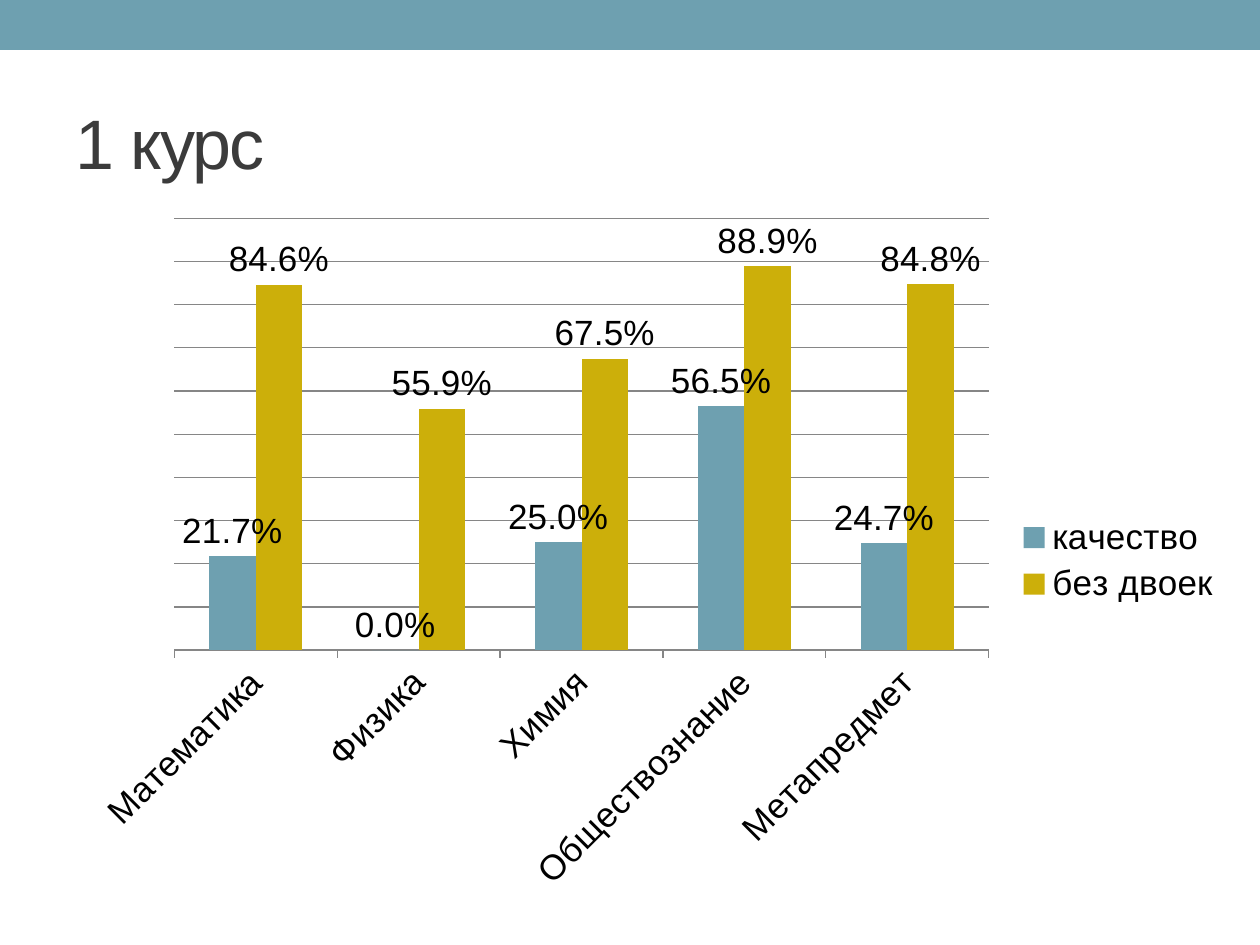
from dataclasses import dataclass

from lxml import etree
from pptx import Presentation
from pptx.chart.data import CategoryChartData
from pptx.dml.color import RGBColor
from pptx.enum.chart import XL_CHART_TYPE, XL_LABEL_POSITION, XL_LEGEND_POSITION, XL_TICK_MARK
from pptx.enum.shapes import MSO_SHAPE
from pptx.enum.text import MSO_ANCHOR, PP_ALIGN
from pptx.oxml import parse_xml
from pptx.oxml.ns import nsdecls
from pptx.util import Pt

COLUMNS = XL_CHART_TYPE.COLUMN_CLUSTERED
OUTSIDE_END = XL_LABEL_POSITION.OUTSIDE_END
LEGEND_RIGHT = XL_LEGEND_POSITION.RIGHT
TICK_OUTSIDE = XL_TICK_MARK.OUTSIDE
TICK_NONE = XL_TICK_MARK.NONE
RECTANGLE = MSO_SHAPE.RECTANGLE
MIDDLE = MSO_ANCHOR.MIDDLE
LEFT = PP_ALIGN.LEFT

EMU_PER_PX = 914400 / 126
TITLE_ONLY_LAYOUT = 5
PERCENT = "0.0%"


@dataclass(frozen=True)
class Theme:
    font: str = "Arial"
    teal: RGBColor = RGBColor.from_string("6EA0B0")
    gold: RGBColor = RGBColor.from_string("CCAF0A")
    title: RGBColor = RGBColor.from_string("3B3B3B")
    text: RGBColor = RGBColor.from_string("000000")
    grid: RGBColor = RGBColor.from_string("868686")
    title_size: int = 40
    chart_size: int = 20


@dataclass(frozen=True)
class Box:
    left: int
    top: int
    width: int
    height: int

    def emu(self) -> tuple[int, ...]:
        return tuple(px(n) for n in (self.left, self.top, self.width, self.height))


@dataclass(frozen=True)
class Series:
    name: str
    values: tuple[float, ...]
    color: RGBColor


THEME = Theme()
PAGE = Box(0, 0, 1260, 945)
BAND = Box(0, 0, 1260, 50)
TITLE = Box(63, 73, 1134, 136)
CHART = Box(63, 204, 1172, 714)
PLOT = Box(174, 218, 815, 432)

SUBJECTS = ("Математика", "Физика", "Химия", "Обществознание", "Метапредмет")
RESULTS = (
    Series("качество", (0.217, 0, 0.25, 0.565, 0.247), THEME.teal),
    Series("без двоек", (0.846, 0.559, 0.675, 0.889, 0.848), THEME.gold),
)


def px(length: int) -> int:
    return round(length * EMU_PER_PX)


def add_band(page) -> None:
    band = page.shapes.add_shape(RECTANGLE, *BAND.emu())
    band.shadow.inherit = False
    band.fill.solid()
    band.fill.fore_color.rgb = THEME.teal
    band.line.fill.background()


def set_title(page, text: str) -> None:
    title = page.shapes.title
    title.left, title.top, title.width, title.height = TITLE.emu()
    frame = title.text_frame
    frame.text = text
    frame.vertical_anchor = MIDDLE
    para = frame.paragraphs[0]
    para.alignment = LEFT
    span = para.runs[0]
    span.font.name = THEME.font
    span.font.size = Pt(THEME.title_size)
    span.font.color.rgb = THEME.title
    span.font._element.set("spc", "-100")


def place_plot(chart) -> None:
    """Fix the inner plot area as fractions of the chart frame."""
    fractions = {
        "x": (PLOT.left - CHART.left) / CHART.width,
        "y": (PLOT.top - CHART.top) / CHART.height,
        "w": PLOT.width / CHART.width,
        "h": PLOT.height / CHART.height,
    }
    modes = '<c:layoutTarget val="inner"/><c:xMode val="edge"/><c:yMode val="edge"/>'
    sizes = "".join(f'<c:{key} val="{value:.3f}"/>' for key, value in fractions.items())
    layout = parse_xml(
        f"<c:layout {nsdecls('c')}><c:manualLayout>{modes}{sizes}</c:manualLayout></c:layout>"
    )
    plot_area = chart._chartSpace.chart.plotArea
    for automatic in plot_area.findall(etree.QName(layout).text):
        plot_area.remove(automatic)
    plot_area.insert(0, layout)


def style_axes(chart) -> None:
    values = chart.value_axis
    values.minimum_scale, values.maximum_scale = 0, 1
    values.major_unit = 0.1
    values.has_major_gridlines = True
    values.major_gridlines.format.line.color.rgb = THEME.grid
    values.major_gridlines.format.line.width = Pt(0.75)
    values.tick_labels.number_format = PERCENT
    values.tick_labels.number_format_is_linked = False
    values.visible = False

    subjects = chart.category_axis
    subjects.major_tick_mark = TICK_OUTSIDE
    subjects.minor_tick_mark = TICK_NONE
    subjects.format.line.color.rgb = THEME.grid
    subjects.format.line.width = Pt(0.75)
    subjects.tick_labels.font.size = Pt(THEME.chart_size)
    subjects._element.txPr.bodyPr.set("rot", "-2700000")


def style_series(series, color: RGBColor) -> None:
    series.invert_if_negative = False
    series.format.fill.solid()
    series.format.fill.fore_color.rgb = color
    labels = series.data_labels
    labels.show_value = True
    labels.number_format = PERCENT
    labels.number_format_is_linked = False
    labels.position = OUTSIDE_END


def add_results_chart(page) -> None:
    data = CategoryChartData(number_format=PERCENT)
    data.categories = SUBJECTS
    for result in RESULTS:
        data.add_series(result.name, result.values)
    chart = page.shapes.add_chart(COLUMNS, *CHART.emu(), data).chart
    chart.has_title = False
    chart.font.name = THEME.font
    chart.font.size = Pt(THEME.chart_size)
    chart.font.color.rgb = THEME.text
    chart.has_legend = True
    chart.legend.position = LEGEND_RIGHT
    chart.legend.include_in_layout = False

    plot = chart.plots[0]
    plot.vary_by_categories = False
    plot.gap_width = 150
    plot.overlap = 0
    for series, result in zip(plot.series, RESULTS):
        style_series(series, result.color)
    style_axes(chart)
    place_plot(chart)


def main() -> None:
    deck = Presentation()
    deck.slide_width, deck.slide_height = px(PAGE.width), px(PAGE.height)
    page = deck.slides.add_slide(deck.slide_layouts[TITLE_ONLY_LAYOUT])
    add_band(page)
    set_title(page, "1 курс")
    add_results_chart(page)
    deck.save("out.pptx")


if __name__ == "__main__":
    main()
